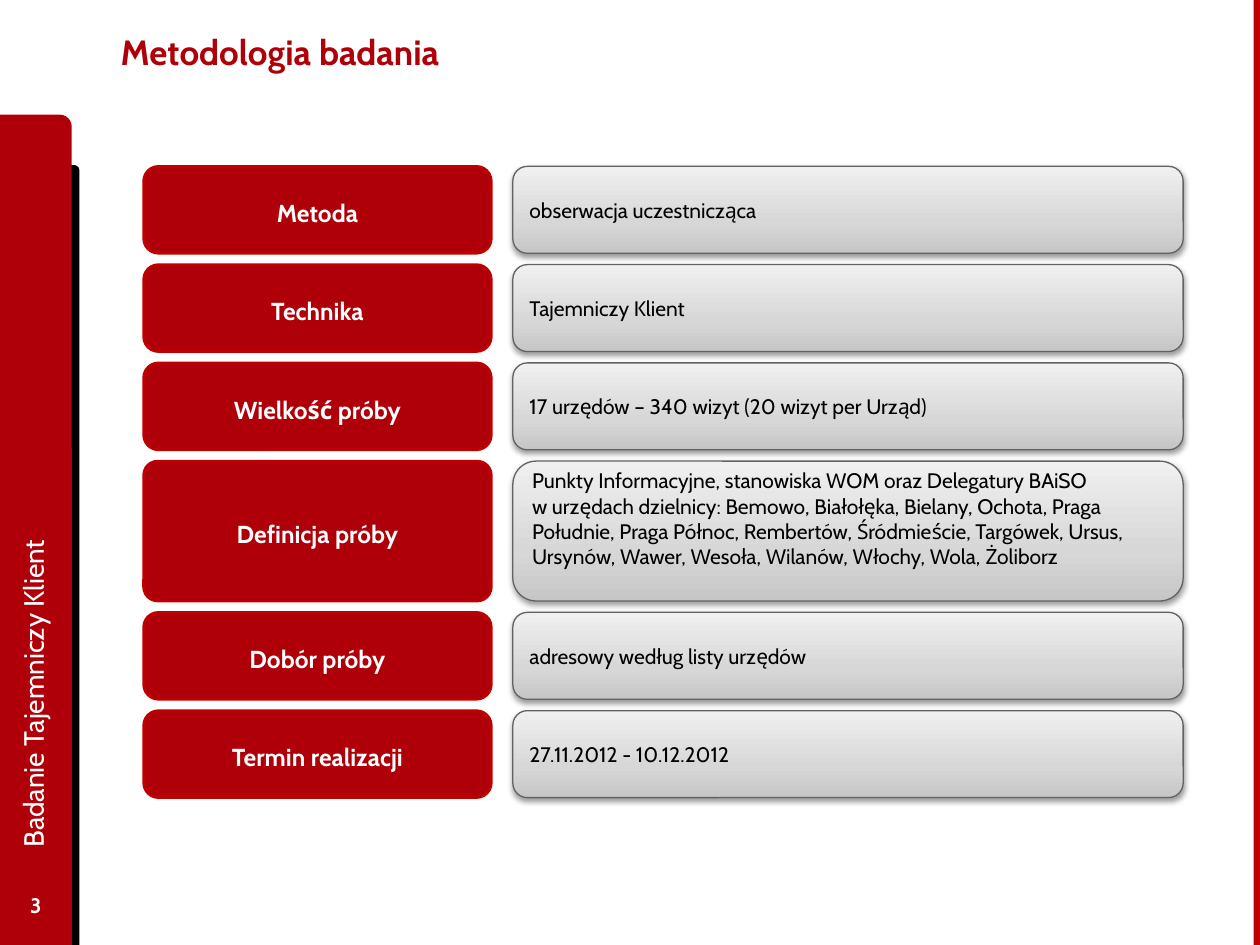
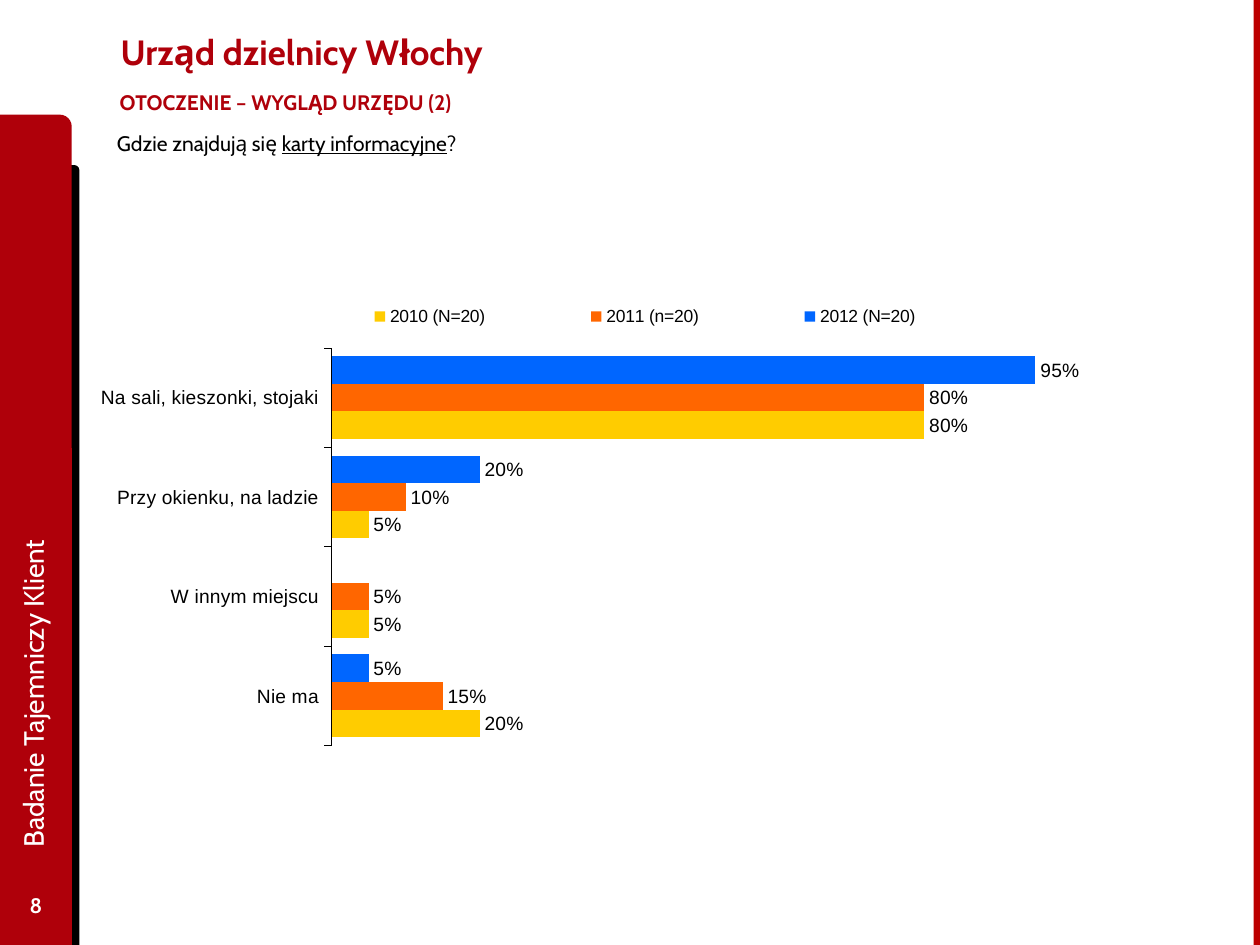
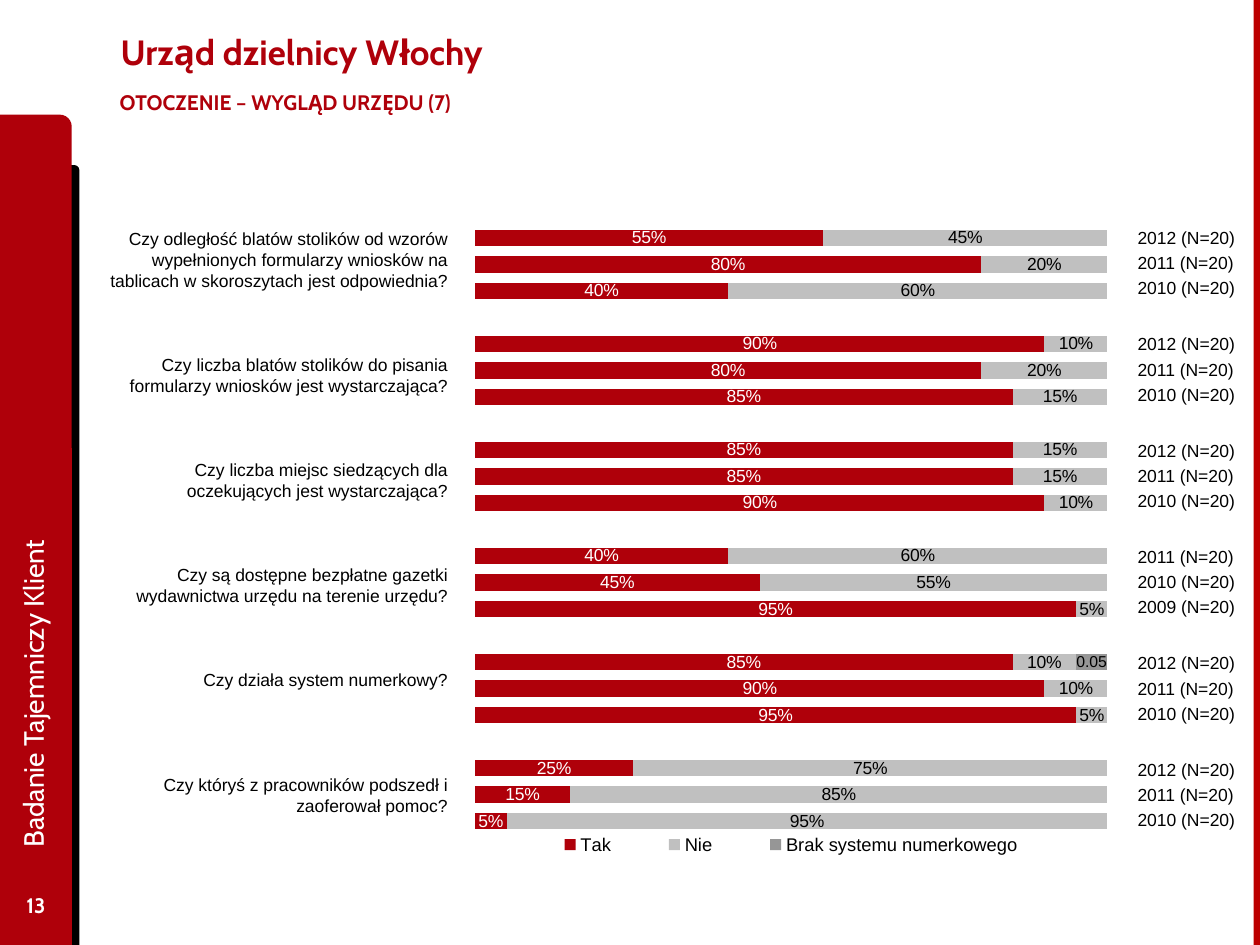
"""Builds three slides of a mystery shopper survey report."""
from dataclasses import dataclass

from pptx import Presentation
from pptx.chart.data import CategoryChartData
from pptx.dml.color import RGBColor
from pptx.enum.chart import XL_CHART_TYPE, XL_LABEL_POSITION, XL_LEGEND_POSITION, XL_TICK_MARK
from pptx.enum.shapes import MSO_SHAPE
from pptx.enum.text import MSO_ANCHOR, PP_ALIGN
from pptx.oxml import parse_xml
from pptx.oxml.ns import nsdecls, qn
from pptx.util import Inches, Pt


@dataclass(frozen=True)
class Theme:
    red: RGBColor = RGBColor(0xAF, 0x00, 0x0A)
    edge_red: RGBColor = RGBColor(0xBD, 0x00, 0x00)
    outline_red: RGBColor = RGBColor(0xC0, 0x00, 0x00)
    outline_gray: RGBColor = RGBColor(0x62, 0x62, 0x62)
    black: RGBColor = RGBColor(0x00, 0x00, 0x00)
    white: RGBColor = RGBColor(0xFF, 0xFF, 0xFF)
    blue: RGBColor = RGBColor(0x00, 0x66, 0xFF)
    orange: RGBColor = RGBColor(0xFF, 0x66, 0x00)
    yellow: RGBColor = RGBColor(0xFF, 0xCC, 0x00)
    light_gray: RGBColor = RGBColor(0xC0, 0xC0, 0xC0)
    dark_gray: RGBColor = RGBColor(0x96, 0x96, 0x96)
    text_font: str = "Cabin"
    chart_font: str = "Arial"
    title: float = 20
    side: float = 16
    label: float = 14
    body: float = 12
    axis: float = 11
    legend: float = 10.5
    small: float = 10
    tiny: float = 9


theme = Theme()

GRADIENT = f"""<a:gradFill {nsdecls("a")} rotWithShape="1"><a:gsLst>
<a:gs pos="0"><a:srgbClr val="C6C6C6"/></a:gs>
<a:gs pos="35000"><a:srgbClr val="D7D7D7"/></a:gs>
<a:gs pos="100000"><a:srgbClr val="F0F0F0"/></a:gs>
</a:gsLst><a:lin ang="16200000" scaled="1"/></a:gradFill>"""
SHADOW = f"""<a:outerShdw {nsdecls("a")} blurRad="40000" dist="20000" dir="5400000"
 rotWithShape="0"><a:srgbClr val="000000"><a:alpha val="38000"/></a:srgbClr></a:outerShdw>"""


def write(shape, lines, size, color, bold=False, align=PP_ALIGN.LEFT,
          anchor=MSO_ANCHOR.TOP, font=theme.text_font, spacing=None):
    frame = shape.text_frame
    frame.word_wrap = True
    frame.vertical_anchor = anchor
    for index, line in enumerate(lines):
        paragraph = frame.paragraphs[0] if index == 0 else frame.add_paragraph()
        paragraph.text = line
        paragraph.alignment = align
        paragraph.line_spacing = spacing
        paragraph.font.size = Pt(size)
        paragraph.font.name = font
        paragraph.font.bold = bold
        paragraph.font.color.rgb = color
    return frame


def add_bars(slide, kind, box, categories, series, overlap, label_position,
             legend_position, legend_size, plot_layout, legend_layout):
    data = CategoryChartData(number_format="0%")
    data.categories = categories
    for name, values, *_ in series:
        data.add_series(name, values)
    chart = slide.shapes.add_chart(kind, *map(Inches, box), data).chart
    chart.has_title = False
    chart.font.name = theme.chart_font
    chart.font.size = Pt(theme.axis)
    chart.font.color.rgb = theme.black
    chart.has_legend = True
    chart.legend.position = legend_position
    chart.legend.include_in_layout = False
    chart.legend.font.size = Pt(legend_size)
    chart.category_axis.reverse_order = True
    chart.value_axis.visible = False
    chart.value_axis.has_major_gridlines = False
    chart.value_axis.minimum_scale = 0
    chart.value_axis.maximum_scale = 1

    bars = chart.plots[0]
    bars.gap_width = 60
    bars.overlap = overlap
    bars.vary_by_categories = False
    for bar, (_, _, fill, label_color, label_size, number_format) in zip(bars.series, series):
        bar.format.fill.solid()
        bar.format.fill.fore_color.rgb = fill
        labels = bar.data_labels
        labels.show_value = True
        labels.position = label_position
        labels.number_format = number_format
        labels.number_format_is_linked = False
        labels.font.name = theme.chart_font
        labels.font.size = Pt(label_size)
        labels.font.color.rgb = label_color

    for tag, place, target, layout in (
        ("c:plotArea", 0, '<c:layoutTarget val="inner"/>', plot_layout),
        ("c:legend", 1, "", legend_layout),
    ):
        area = chart.element.find(".//" + qn(tag))
        for automatic in area.findall(qn("c:layout")):
            area.remove(automatic)
        sizes = "".join(f'<c:{key} val="{value}"/>' for key, value in zip("xywh", layout))
        area.insert(place, parse_xml(
            f'<c:layout {nsdecls("c")}><c:manualLayout>{target}<c:xMode val="edge"/>'
            f'<c:yMode val="edge"/>{sizes}</c:manualLayout></c:layout>'))
    return chart


presentation = Presentation()
presentation.slide_width = Inches(10)
presentation.slide_height = Inches(7.5)

BANDS = (
    (MSO_SHAPE.ROUND_1_RECTANGLE, (0.39, 1.31, 0.24, 6.19), theme.black),
    (MSO_SHAPE.ROUND_1_RECTANGLE, (0, 0.91, 0.57, 6.59), theme.red),
    (MSO_SHAPE.RECTANGLE, (9.95, 0, 0.05, 7.5), theme.edge_red),
)
PAGES = (
    ("Metodologia badania", None, "3"),
    ("Urząd dzielnicy Włochy", "OTOCZENIE – WYGLĄD URZĘDU (2)", "8"),
    ("Urząd dzielnicy Włochy", "OTOCZENIE – WYGLĄD URZĘDU (7)", "13"),
)
slides = []
for heading, section, number in PAGES:
    slide = presentation.slides.add_slide(presentation.slide_layouts[6])
    slides.append(slide)
    for outline, box, color in BANDS:
        band = slide.shapes.add_shape(outline, *map(Inches, box))
        band.shadow.inherit = False
        band.fill.solid()
        band.fill.fore_color.rgb = color
        band.line.fill.background()
    title = slide.shapes.add_textbox(Inches(0.86), Inches(0.05), Inches(7.77), Inches(0.72))
    write(title, [heading], theme.title, theme.red, bold=True, anchor=MSO_ANCHOR.MIDDLE)
    if section:
        subtitle = slide.shapes.add_textbox(Inches(0.75), Inches(0.66), Inches(3.85), Inches(0.33))
        frame = write(subtitle, [section], theme.body, theme.red, bold=True)
        frame.margin_left = frame.margin_right = Inches(0.2)
    page_number = slide.shapes.add_textbox(0, Inches(6.98), Inches(0.57), Inches(0.4))
    write(page_number, [number], theme.body, theme.white, bold=True,
          align=PP_ALIGN.CENTER, anchor=MSO_ANCHOR.MIDDLE)
    survey_name = slide.shapes.add_textbox(Inches(-2.62), Inches(3.69), Inches(5.76), Inches(0.51))
    survey_name.rotation = 270
    write(survey_name, ["Badanie Tajemniczy Klient"], theme.side, theme.white,
          anchor=MSO_ANCHOR.MIDDLE)

methodology, information_cards, surroundings = slides

METHOD_ROWS = (
    ("Metoda", "obserwacja uczestnicząca", 0.69),
    ("Technika", "Tajemniczy Klient", 0.69),
    ("Wielkość próby", "17 urzędów – 340 wizyt (20 wizyt per Urząd)", 0.69),
    ("Definicja próby",
     "Punkty Informacyjne, stanowiska WOM oraz Delegatury BAiSO\n"
     "w urzędach dzielnicy: Bemowo, Białołęka, Bielany, Ochota, Praga Południe, "
     "Praga Północ, Rembertów, Śródmieście, Targówek, Ursus, Ursynów, Wawer, "
     "Wesoła, Wilanów, Włochy, Wola, Żoliborz", 1.11),
    ("Dobór próby", "adresowy według listy urzędów", 0.69),
    ("Termin realizacji", "27.11.2012 - 10.12.2012", 0.69),
)
top = 1.32
for topic, description, height in METHOD_ROWS:
    topic_box = methodology.shapes.add_shape(
        MSO_SHAPE.ROUNDED_RECTANGLE, Inches(1.14), Inches(top), Inches(2.76), Inches(height))
    topic_box.shadow.inherit = False
    topic_box.adjustments[0] = round(0.115 / height, 2)
    topic_box.fill.solid()
    topic_box.fill.fore_color.rgb = theme.red
    topic_box.line.color.rgb = theme.outline_red
    topic_box.line.width = Pt(1.5)
    write(topic_box, [topic], theme.label, theme.white, bold=True, align=PP_ALIGN.CENTER,
          anchor=MSO_ANCHOR.MIDDLE, spacing=1.2)

    description_box = methodology.shapes.add_shape(
        MSO_SHAPE.ROUNDED_RECTANGLE, Inches(4.07), Inches(top), Inches(5.32), Inches(height))
    description_box.shadow.inherit = False
    description_box.fill.background()
    properties = description_box.element.spPr
    properties.replace(properties.find(qn("a:noFill")), parse_xml(GRADIENT))
    properties.find(qn("a:effectLst")).append(parse_xml(SHADOW))
    description_box.line.color.rgb = theme.outline_gray
    description_box.line.width = Pt(0.75)
    frame = write(description_box, [description], theme.body, theme.black,
                  anchor=MSO_ANCHOR.MIDDLE)
    if height > 1:
        frame.margin_bottom = Inches(0.25)
    top += height + 0.09

question = information_cards.shapes.add_textbox(
    Inches(0.83), Inches(0.99), Inches(6.15), Inches(0.3))
frame = write(question, ["Gdzie znajdują się "], theme.body, theme.black)
subject = frame.paragraphs[0].add_run()
subject.text = "karty informacyjne"
subject.font.underline = True
frame.paragraphs[0].add_run().text = "?"

cards_chart = add_bars(
    information_cards, XL_CHART_TYPE.BAR_CLUSTERED, (0.8, 2.37, 9.07, 3.55),
    ("Na sali, kieszonki, stojaki", "Przy okienku, na ladzie", "W innym miejscu", "Nie ma"),
    (
        ("2012 (N=20)", (0.95, 0.2, None, 0.05), theme.blue, theme.black, theme.axis, "0%"),
        ("2011 (n=20)", (0.8, 0.1, 0.05, 0.15), theme.orange, theme.black, theme.axis, "0%"),
        ("2010 (N=20)", (0.8, 0.05, 0.05, 0.2), theme.yellow, theme.black, theme.axis, "0%"),
    ),
    0, XL_LABEL_POSITION.OUTSIDE_END, XL_LEGEND_POSITION.TOP, theme.small,
    (0.2, 0.11, 0.65, 0.89), (0.15, 0, 0.65, 0.08))
places = cards_chart.category_axis
places.major_tick_mark = XL_TICK_MARK.OUTSIDE
places.format.line.color.rgb = theme.black
places.format.line.width = Pt(0.25)
places.tick_labels.font.size = Pt(theme.axis)

YES = (0.55, 0.8, 0.4, None, 0.9, 0.8, 0.85, None, 0.85, 0.85, 0.9, None,
       0.4, 0.45, 0.95, None, 0.85, 0.9, 0.95, None, 0.25, 0.15, 0.05)
NO = (0.45, 0.2, 0.6, None, 0.1, 0.2, 0.15, None, 0.15, 0.15, 0.1, None,
      0.6, 0.55, 0.05, None, 0.1, 0.1, 0.05, None, 0.75, 0.85, 0.95)
NO_SYSTEM = [0.05 if row == 16 else None for row in range(len(YES))]
answers_chart = add_bars(
    surroundings, XL_CHART_TYPE.BAR_STACKED, (3.77, 1.57, 5.02, 5.32),
    [str(row + 1) for row in range(len(YES))],
    (
        ("Tak", YES, theme.red, theme.white, theme.small, "0%"),
        ("Nie", NO, theme.light_gray, theme.black, theme.small, "0%"),
        ("Brak systemu numerkowego", NO_SYSTEM, theme.dark_gray, theme.black,
         theme.tiny, "General"),
    ),
    100, XL_LABEL_POSITION.CENTER, XL_LEGEND_POSITION.RIGHT, theme.legend,
    (0, 0.04, 1, 0.91), (0.06, 0.94, 0.88, 0.05))
answers_chart.category_axis.visible = False
answers_chart.value_axis.major_unit = 0.2

QUESTIONS = (
    "Czy odległość blatów stolików od wzorów wypełnionych formularzy wniosków "
    "na tablicach w skoroszytach jest odpowiednia?",
    "Czy liczba blatów stolików do pisania formularzy wniosków jest wystarczająca?",
    "Czy liczba miejsc siedzących dla oczekujących jest wystarczająca?",
    "Czy są dostępne bezpłatne gazetki wydawnictwa urzędu na terenie urzędu?",
    "Czy działa system numerkowy?",
    "Czy któryś z pracowników podszedł i zaoferował pomoc?",
)
question_list = surroundings.shapes.add_shape(
    MSO_SHAPE.RECTANGLE, Inches(0.75), Inches(1.76), Inches(2.9), Inches(4.98))
question_list.shadow.inherit = False
question_list.fill.solid()
question_list.fill.fore_color.rgb = theme.white
question_list.line.fill.background()
frame = write(question_list, QUESTIONS, theme.small, theme.black, align=PP_ALIGN.RIGHT,
              font=theme.chart_font)
for paragraph in frame.paragraphs[1:]:
    paragraph.space_before = Pt(36)
frame.paragraphs[-1].space_before = Pt(48)

for group in range(len(QUESTIONS)):
    latest = 2011 if group == 3 else 2012
    years = surroundings.shapes.add_textbox(
        Inches(8.93), Inches(1.72 + 0.844 * group), Inches(1.07), Inches(0.8))
    write(years, [f"{latest - age} (N=20)" for age in range(3)], theme.small, theme.black,
          font=theme.chart_font, spacing=1.2)

presentation.save("out.pptx")
